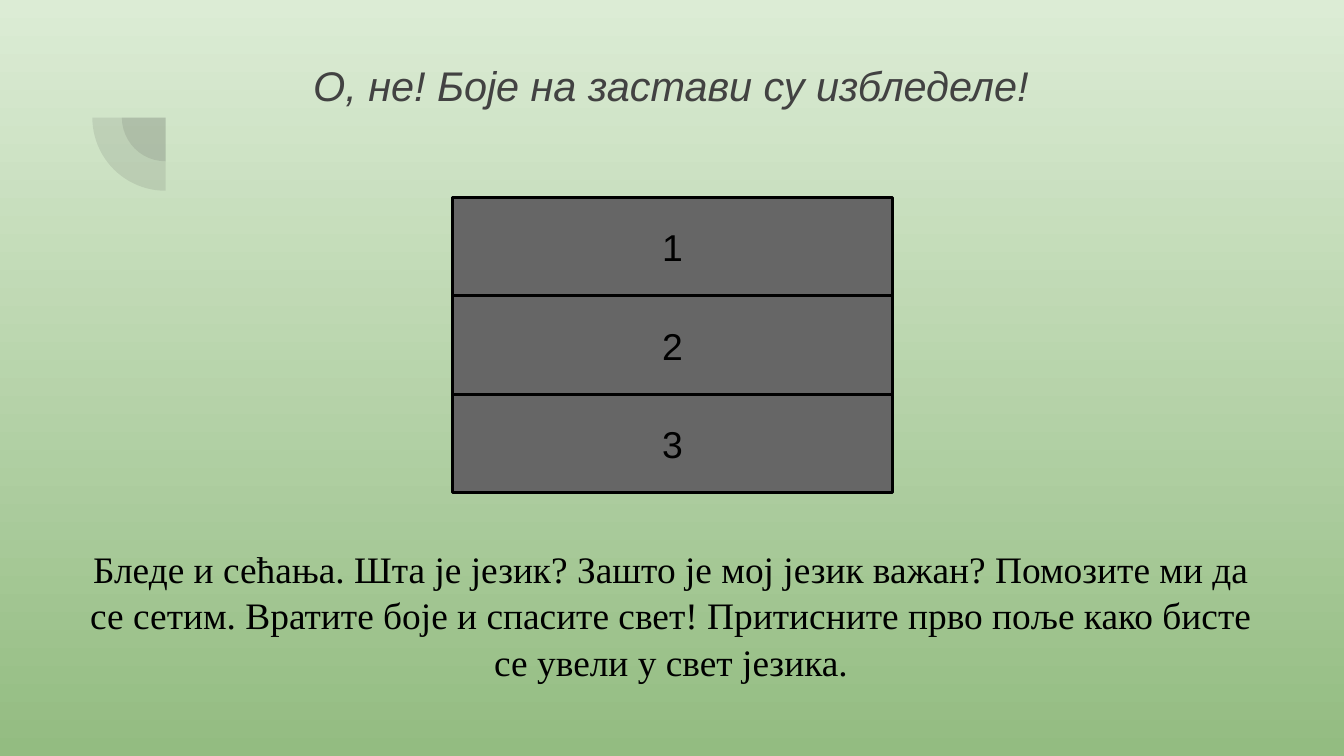
from dataclasses import dataclass

from lxml.etree import SubElement
from pptx import Presentation
from pptx.dml.color import RGBColor
from pptx.enum.shapes import MSO_SHAPE
from pptx.enum.text import MSO_ANCHOR, PP_ALIGN
from pptx.oxml.ns import qn
from pptx.shapes.autoshape import Shape
from pptx.slide import Slide
from pptx.util import Pt

SKY = RGBColor(0xDC, 0xEC, 0xD5)
MEADOW = RGBColor(0x93, 0xBC, 0x81)
CHARCOAL = RGBColor(0x42, 0x42, 0x42)
FADED = RGBColor(0x66, 0x66, 0x66)
BLACK = RGBColor(0, 0, 0)

INSET = Pt(7.2)
FRAME = {"margin_left": INSET, "margin_right": INSET, "margin_top": INSET,
         "margin_bottom": INSET, "word_wrap": True}


@dataclass
class Passage:
    words: str
    font: dict
    anchor: MSO_ANCHOR = MSO_ANCHOR.TOP
    line_spacing: float = 1.0


@dataclass
class Box:
    left: float
    top: float
    width: float
    height: float

    def lengths(self) -> tuple:
        return Pt(self.left), Pt(self.top), Pt(self.width), Pt(self.height)


def write(holder: Shape, passage: Passage, color: RGBColor) -> None:
    frame = holder.text_frame
    for name, value in FRAME.items():
        setattr(frame, name, value)
    frame.vertical_anchor = passage.anchor
    paragraph = frame.paragraphs[0]
    paragraph.alignment = PP_ALIGN.CENTER
    paragraph.line_spacing = passage.line_spacing
    run = paragraph.add_run()
    run.text = passage.words
    for name, value in passage.font.items():
        setattr(run.font, name, value)
    run.font.color.rgb = color


def draw_text(slide: Slide, box: Box, passage: Passage, color: RGBColor) -> None:
    write(slide.shapes.add_textbox(*box.lengths()), passage, color)


def draw_quarter(slide: Slide, center: tuple[float, float], radius: float) -> None:
    box = Box(center[0] - radius, center[1] - radius, 2 * radius, 2 * radius)
    quarter = slide.shapes.add_shape(MSO_SHAPE.PIE, *box.lengths())
    quarter.shadow.inherit = False
    quarter.rotation = 270
    quarter.adjustments[0] = 108
    quarter.adjustments[1] = 162
    quarter.fill.solid()
    quarter.fill.fore_color.rgb = CHARCOAL
    quarter.line.fill.background()
    tint = next(quarter.element.spPr.iter(qn("a:srgbClr")))
    SubElement(tint, qn("a:alpha"), val="12000")


def draw_stripe(slide: Slide, box: Box, passage: Passage) -> None:
    stripe = slide.shapes.add_shape(MSO_SHAPE.RECTANGLE, *box.lengths())
    stripe.shadow.inherit = False
    stripe.fill.solid()
    stripe.fill.fore_color.rgb = FADED
    stripe.line.color.rgb = BLACK
    stripe.line.width = Pt(1.5)
    write(stripe, passage, BLACK)


def main() -> None:
    deck = Presentation()
    deck.slide_width, deck.slide_height = Pt(720), Pt(405)
    slide = deck.slides.add_slide(deck.slide_layouts[6])

    # Background fading from top to bottom
    backdrop = slide.background.fill
    backdrop.gradient()
    backdrop.gradient_angle = 270
    for stop, color, position in zip(backdrop.gradient_stops, (SKY, MEADOW), (0, 1)):
        stop.color.rgb = color
        stop.position = position

    # Corner ornament
    for radius in (23.4, 39.2):
        draw_quarter(slide, (88.7, 63), radius)

    # Title and story
    draw_text(slide, Box(30.2, 25.2, 659, 68.4), Passage(
        "О, не! Боје на застави су избледеле!",
        {"name": "Arial", "size": Pt(22.2), "italic": True}), CHARCOAL)
    draw_text(slide, Box(40.3, 284.4, 638.6, 107.3), Passage(
        "Бледе и сећања. Шта је језик? Зашто је мој језик важан? "
        "Помозите ми да се сетим. Вратите боје и спасите свет! "
        "Притисните прво поље како бисте се увели у свет језика.",
        {"name": "Times New Roman", "size": Pt(20)}, line_spacing=1.04), BLACK)

    # Flag of three faded stripes
    stripe_height = 52.7
    for index in range(3):
        draw_stripe(
            slide, Box(242.6, 105.8 + index * stripe_height, 235.4, stripe_height),
            Passage(str(index + 1), {"name": "Arial", "size": Pt(20)}, MSO_ANCHOR.MIDDLE))

    deck.save("out.pptx")


if __name__ == "__main__":
    main()
